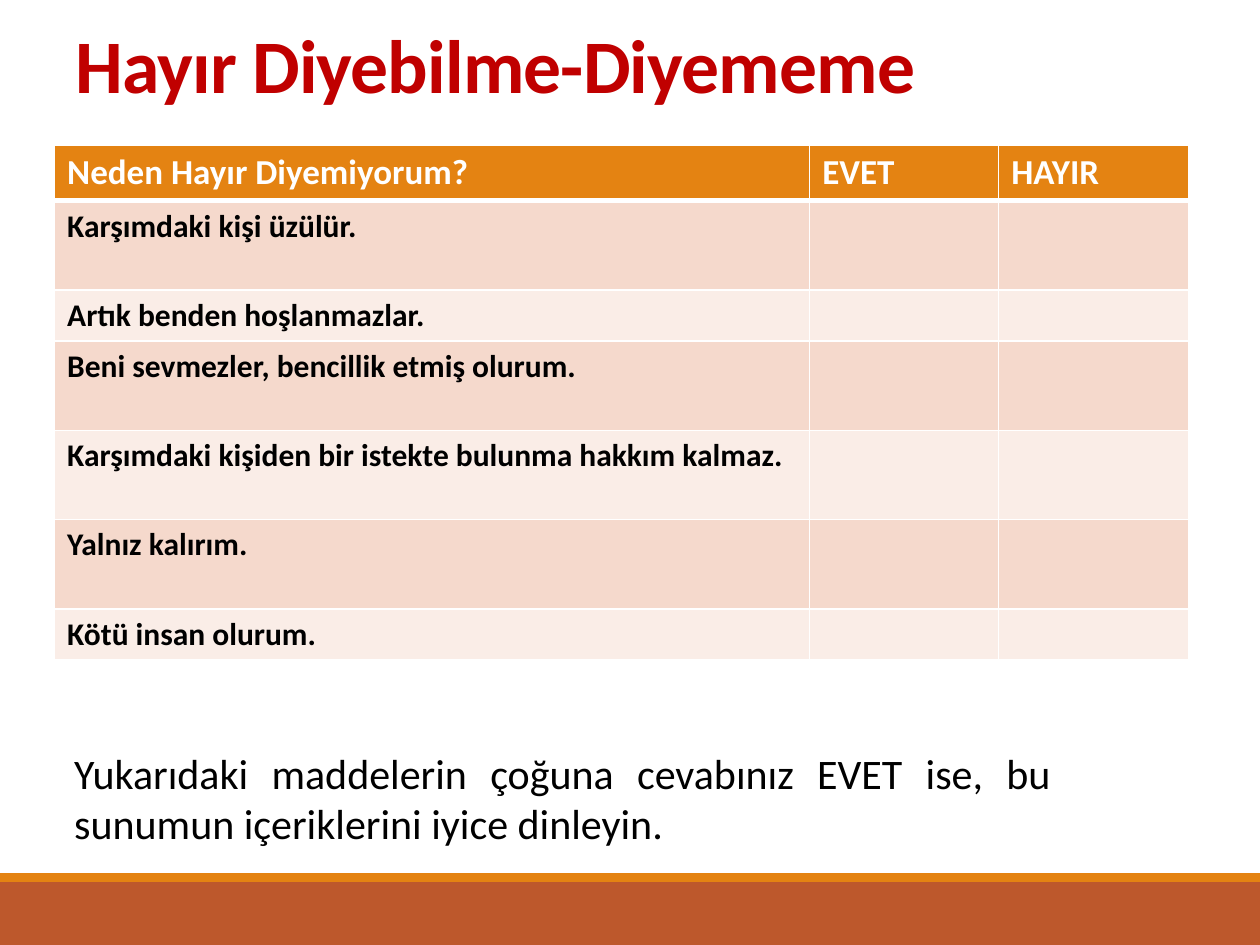
from lxml.etree import SubElement
from pptx import Presentation
from pptx.dml.color import RGBColor
from pptx.enum.shapes import MSO_SHAPE
from pptx.enum.text import MSO_ANCHOR, PP_ALIGN
from pptx.oxml.ns import qn
from pptx.util import Pt

WHITE = RGBColor(0xFF, 0xFF, 0xFF)
BLACK = RGBColor(0, 0, 0)
RED = RGBColor(0xC0, 0, 0)
ORANGE = RGBColor(0xE4, 0x83, 0x12)
RUST = RGBColor(0xBD, 0x58, 0x2C)
BANDS = [RGBColor(0xFA, 0xED, 0xE7), RGBColor(0xF5, 0xD9, 0xCC)]

HEADERS = ["Neden Hayır Diyemiyorum?", "EVET", "HAYIR"]
REASONS = [
    ("Karşımdaki kişi üzülür.", 51),
    ("Artık benden hoşlanmazlar.", 29),
    ("Beni sevmezler, bencillik etmiş olurum.", 51),
    ("Karşımdaki kişiden bir istekte bulunma hakkım kalmaz.", 51),
    ("Yalnız kalırım.", 51),
    ("Kötü insan olurum.", 29),
]


def write(p, text, size, color, bold):
    r = p.add_run()
    r.text = text
    r.font.color.rgb = color
    for name, value in {"name": "Calibri", "size": Pt(size), "bold": bold}.items():
        setattr(r.font, name, value)
    return r


def set_borders(cell, bottom):
    tcPr = cell._tc.get_or_add_tcPr()
    for i, (tag, width) in enumerate([("lnL", 1), ("lnR", 1), ("lnT", 1), ("lnB", bottom)]):
        ln = SubElement(tcPr, qn(f"a:{tag}"), w=str(Pt(width)))
        SubElement(SubElement(ln, qn("a:solidFill")), qn("a:srgbClr"), val=str(WHITE))
        tcPr.insert(i, ln)


prs = Presentation()
prs.slide_width, prs.slide_height = Pt(720), Pt(540)
s = prs.slides.add_slide(prs.slide_layouts[5])

for top, height, color in [(504, 36, RUST), (499, 5, ORANGE)]:
    sp = s.shapes.add_shape(MSO_SHAPE.RECTANGLE, 0, Pt(top), Pt(720), Pt(height))
    sp.shadow.inherit = False
    sp.fill.solid()
    sp.fill.fore_color.rgb = color
    sp.line.fill.background()

title = s.shapes.title
for name, value in {"left": 36, "top": 21.6, "width": 648, "height": 44}.items():
    setattr(title, name, Pt(value))
tf = title.text_frame
tf.vertical_anchor = MSO_ANCHOR.BOTTOM
tf.word_wrap = True
p = tf.paragraphs[0]
p.alignment = PP_ALIGN.LEFT
p.line_spacing = 0.85
r = write(p, "Hayır Diyebilme-Diyememe", 43.2, RED, True)
r.font._element.set("spc", "-50")

rows = [(HEADERS, 31)] + [([reason, "", ""], height) for reason, height in REASONS]
table = s.shapes.add_table(len(rows), 3, Pt(31.2), Pt(83), Pt(648), Pt(293)).table
for col, width in zip(table.columns, [431.5, 108, 108.5]):
    col.width = Pt(width)
for i, (texts, height) in enumerate(rows):
    table.rows[i].height = Pt(height)
    size, color, fill = (18, BLACK, BANDS[i % 2]) if i else (20, WHITE, ORANGE)
    for j, text in enumerate(texts):
        cell = table.cell(i, j)
        cell.fill.solid()
        cell.fill.fore_color.rgb = fill
        set_borders(cell, 1 if i else 3)
        if text:
            write(cell.text_frame.paragraphs[0], text, size, color, True)
    if i == 1:
        for cell in table.rows[i].cells:
            cell._tc.tcPr.find(qn("a:lnT")).set("w", str(Pt(3)))

tf = s.shapes.add_textbox(Pt(35.3), Pt(423.4), Pt(572.4), Pt(65.5)).text_frame
tf.word_wrap = True
p = tf.paragraphs[0]
p.alignment = PP_ALIGN.JUSTIFY
write(p, "Yukarıdaki maddelerin çoğuna cevabınız EVET ise, bu sunumun içeriklerini iyice dinleyin.",
      24, BLACK, False)

prs.save("out.pptx")
